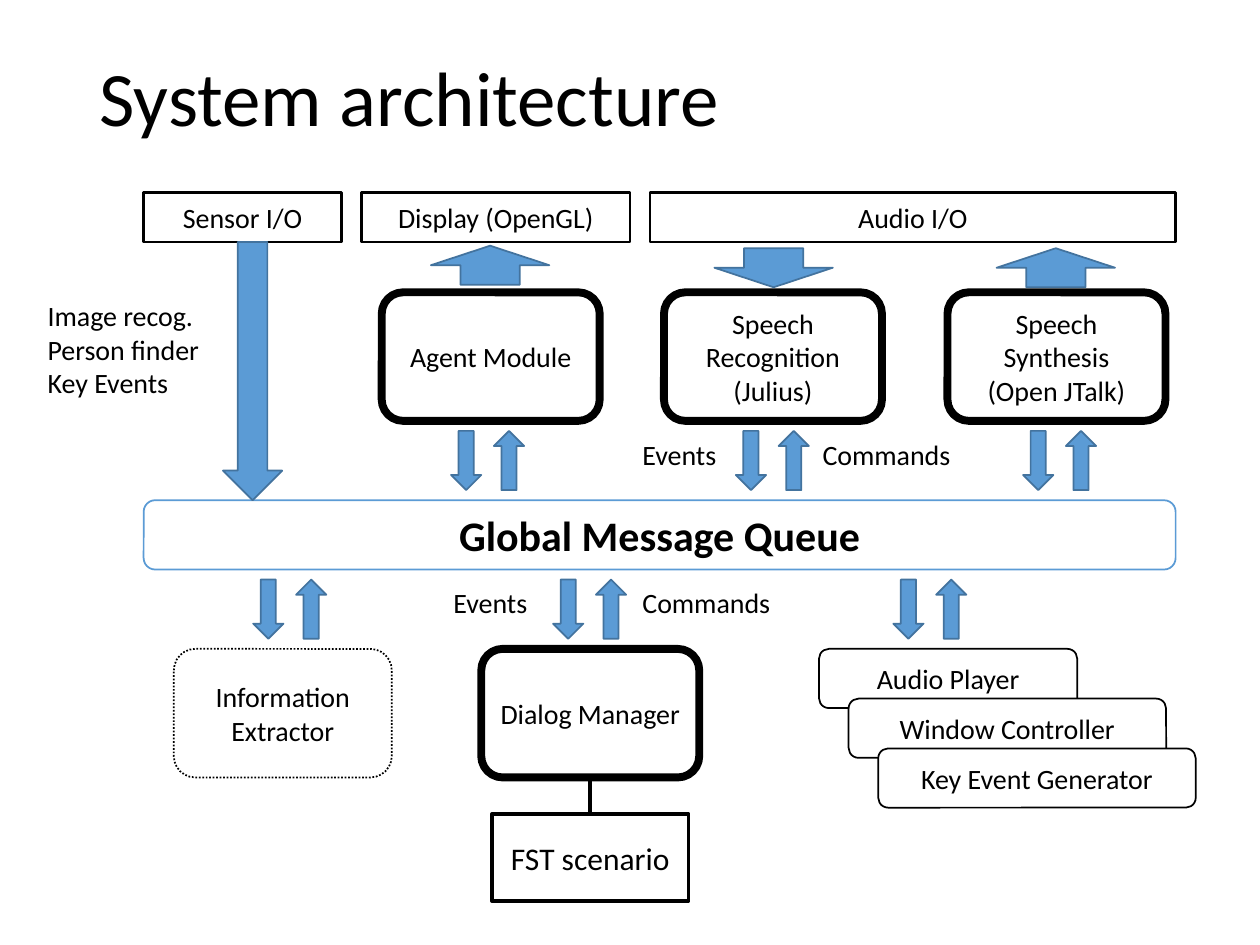
from pptx import Presentation
from pptx.dml.color import RGBColor
from pptx.enum.dml import MSO_LINE
from pptx.enum.shapes import MSO_CONNECTOR, MSO_SHAPE
from pptx.enum.text import MSO_ANCHOR, MSO_AUTO_SIZE, PP_ALIGN
from pptx.oxml.ns import qn
from pptx.util import Inches, Pt

RECT, ROUND = MSO_SHAPE.RECTANGLE, MSO_SHAPE.ROUNDED_RECTANGLE
DOWN, UP = MSO_SHAPE.DOWN_ARROW, MSO_SHAPE.UP_ARROW
BLACK = RGBColor(0x00, 0x00, 0x00)
WHITE = RGBColor(0xFF, 0xFF, 0xFF)
BLUE = RGBColor(0x5B, 0x9B, 0xD5)
DARK_BLUE = RGBColor(0x43, 0x73, 0x9E)
FONT = "Calibri"

# Rows, from top to bottom
IO_Y, IO_H = 1.53, 0.39
MODULE_Y, MODULE_W, MODULE_H = 2.32, 1.73, 1.02
UPPER_Y, LOWER_Y = 3.42, 4.6
QUEUE_Y, QUEUE_H = 3.97, 0.55
CLIENT_Y = 5.15
FST_Y, FST_W, FST_H = 6.46, 1.56, 0.69
# Columns
LEFT, WIDTH = 1.14, 8.19
AGENT_X, RECOG_X, SYNTH_X = 3.03, 5.27, 7.52
EXTRACTOR_X, DIALOG_X = 1.38, 3.82
DIALOG_MID = DIALOG_X + MODULE_W / 2
# Arrows
PAIR_W, PAIR_H, PAIR_STEP = 0.24, 0.47, 0.34
WIDE_W, WIDE_H = 0.94, 0.31


def write(tf, lines, align, size=16, bold=False):
    for i, line in enumerate(lines):
        p = tf.paragraphs[0] if i == 0 else tf.add_paragraph()
        p.alignment = align
        r = p.add_run()
        r.text = line
        for name, value in dict(name=FONT, size=Pt(size), bold=bold).items():
            setattr(r.font, name, value)
        r.font.color.rgb = BLACK


def add_box(shapes, kind, x, y, w, h, lines=(), size=16, bold=False,
            fill=WHITE, line=BLACK, weight=1):
    sp = shapes.add_shape(kind, Inches(x), Inches(y), Inches(w), Inches(h))
    sp.shadow.inherit = False
    sp.fill.solid()
    sp.fill.fore_color.rgb = fill
    sp.line.color.rgb = line
    sp.line.width = Pt(weight)
    sp.text_frame.vertical_anchor = MSO_ANCHOR.MIDDLE
    write(sp.text_frame, lines, PP_ALIGN.CENTER, size, bold)
    return sp


prs = Presentation()
prs.slide_width, prs.slide_height = Inches(10), Inches(7.5)
s = prs.slides.add_slide(prs.slide_layouts[5])
shapes = s.shapes

# Title
title = shapes.title
for name, value in dict(left=0.69, top=0.08, width=8.62, height=1.45).items():
    setattr(title, name, Inches(value))
title.text_frame.vertical_anchor = MSO_ANCHOR.MIDDLE
write(title.text_frame, ["System architecture"], PP_ALIGN.LEFT, 44)
title.text_frame.paragraphs[0].line_spacing = 0.9

# Modules with heavy outlines
for x, y, lines in [
    (RECOG_X, MODULE_Y, ["Speech Recognition", "(Julius)"]),
    (DIALOG_X, CLIENT_Y, ["Dialog Manager"]),
    (SYNTH_X, MODULE_Y, ["Speech Synthesis", "(Open JTalk)"]),
    (AGENT_X, MODULE_Y, ["Agent Module"]),
]:
    add_box(shapes, ROUND, x, y, MODULE_W, MODULE_H, lines, weight=4.5)

extractor = add_box(shapes, ROUND, EXTRACTOR_X, CLIENT_Y, MODULE_W, MODULE_H,
                    ["Information", "Extractor"])
extractor.line.dash_style = MSO_LINE.ROUND_DOT

add_box(shapes, ROUND, LEFT, QUEUE_Y, WIDTH, QUEUE_H,
        ["Global Message Queue"], size=24, bold=True, line=BLUE)

# Overlapping stack of small clients
for i, (label, w) in enumerate([("Audio Player", 2.05),
                                ("Window Controller", 2.52),
                                ("Key Event Generator", 2.52)]):
    add_box(shapes, ROUND, 6.5 + 0.235 * i, CLIENT_Y + 0.395 * i, w, 0.47, [label])

# Input and output devices
for label, x, w in [("Sensor I/O", LEFT, 1.57),
                    ("Display (OpenGL)", 2.87, 2.13),
                    ("Audio I/O", 5.16, 4.17)]:
    add_box(shapes, RECT, x, IO_Y, w, IO_H, [label], weight=1.5)

# Arrows between devices, modules and queue
for kind, x, y, w, h in [
    (DOWN, 1.77, IO_Y + IO_H, 0.47, QUEUE_Y - IO_Y - IO_H),
    (UP, 3.42, 1.95, WIDE_W, WIDE_H),
    (DOWN, 5.67, 1.97, WIDE_W, WIDE_H),
    (UP, 7.91, 1.97, WIDE_W, WIDE_H),
]:
    add_box(shapes, kind, x, y, w, h, fill=BLUE, line=DARK_BLUE)

# Event and command arrow pairs
for y, columns in [(UPPER_Y, (3.58, 5.84, 8.12)), (LOWER_Y, (2.01, 4.39, 7.09))]:
    for x in columns:
        pair = s.shapes.add_group_shape().shapes
        for i, kind in enumerate((DOWN, UP)):
            add_box(pair, kind, x + PAIR_STEP * i, y, PAIR_W, PAIR_H,
                    fill=BLUE, line=DARK_BLUE)

# Labels
for x, y, w, h, lines in [
    (5, UPPER_Y, 0.89, 0.37, ["Events"]),
    (6.43, UPPER_Y, 1.35, 0.37, ["Commands"]),
    (3.5, LOWER_Y, 0.89, 0.37, ["Events"]),
    (5, LOWER_Y, 1.35, 0.37, ["Commands"]),
    (0.28, MODULE_Y, 1.54, 0.94, ["Image recog.", "Person finder", "Key Events"]),
]:
    tf = shapes.add_textbox(Inches(x), Inches(y), Inches(w), Inches(h)).text_frame
    tf.word_wrap = False
    tf.auto_size = MSO_AUTO_SIZE.SHAPE_TO_FIT_TEXT
    write(tf, lines, PP_ALIGN.LEFT)

# Scenario hanging from the dialog manager
add_box(shapes, RECT, DIALOG_MID - FST_W / 2, FST_Y, FST_W, FST_H,
        ["FST scenario"], size=18, weight=2.25)
link = shapes.add_connector(MSO_CONNECTOR.STRAIGHT, Inches(DIALOG_MID), Inches(FST_Y),
                            Inches(DIALOG_MID), Inches(CLIENT_Y + MODULE_H))
link.line.color.rgb = BLACK
link.line.width = Pt(2.25)
spPr = link._element.spPr
spPr.append(spPr.makeelement(qn("a:effectLst"), {}))

prs.save("out.pptx")
